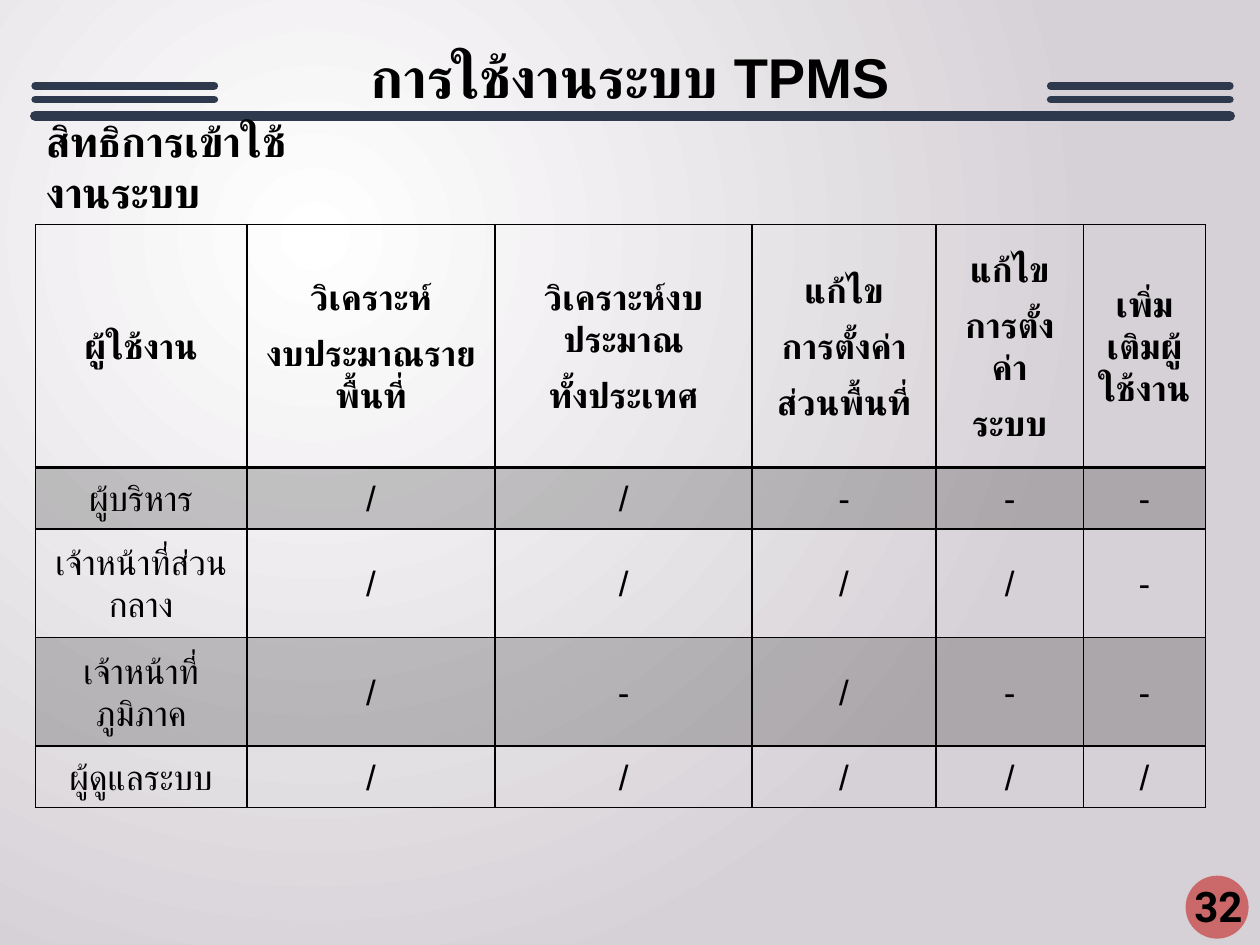
from dataclasses import dataclass

from lxml.etree import SubElement
from pptx import Presentation
from pptx.dml.color import RGBColor
from pptx.enum.shapes import MSO_CONNECTOR, MSO_SHAPE
from pptx.enum.text import MSO_ANCHOR, MSO_AUTO_SIZE, PP_ALIGN
from pptx.oxml.ns import qn
from pptx.util import Inches, Pt

BLACK = RGBColor(0x00, 0x00, 0x00)
WHITE = RGBColor(0xFF, 0xFF, 0xFF)
MIST = RGBColor(0xD6, 0xD1, 0xD6)
NAVY = RGBColor(0x2E, 0x39, 0x4D)
RED = RGBColor(0xC0, 0x00, 0x00)


@dataclass
class Rule:
    left: float
    right: float
    y: float
    weight: float


@dataclass
class Row:
    height: float
    cells: list[str]
    header: bool = False
    shaded: bool = False


RULES = [Rule(0.28, 9.76, 0.92, 6)] + [
    Rule(left, left + 1.42, y, 4.5) for y in (0.79, 0.68) for left in (8.34, 0.28)
]
COLUMN_WIDTHS = [1.68, 1.97, 2.04, 1.46, 1.17, 0.97]
ROWS = [
    Row(1.93, ["ผู้ใช้งาน", "วิเคราะห์\nงบประมาณรายพื้นที่", "วิเคราะห์งบประมาณ\nทั้งประเทศ",
               "แก้ไข\nการตั้งค่า\nส่วนพื้นที่", "แก้ไข\nการตั้งค่า\nระบบ", "เพิ่มเติมผู้ใช้งาน"],
        header=True),
    Row(0.49, ["ผู้บริหาร", "/", "/", "-", "-", "-"], shaded=True),
    Row(0.86, ["เจ้าหน้าที่ส่วนกลาง", "/", "/", "/", "/", "-"]),
    Row(0.86, ["เจ้าหน้าที่ภูมิภาค", "/", "-", "/", "-", "-"], shaded=True),
    Row(0.49, ["ผู้ดูแลระบบ", "/", "/", "/", "/", "/"]),
]


def write_text(frame, text: str, *, size: float, font: str = "Arial", bold: bool = True,
               align=PP_ALIGN.CENTER, line_spacing=None, space_after=None) -> None:
    frame.text = text
    for para in frame.paragraphs:
        para.alignment = align
        para.line_spacing = line_spacing
        para.space_after = space_after
        for span in para.runs:
            span.font.name = font
            span.font.size = Pt(size)
            span.font.bold = bold
            span.font.color.rgb = BLACK
            SubElement(span.font._element, qn("a:cs"), typeface=font)


def set_opacity(properties, percent: int) -> None:
    color = properties.find(f"{qn('a:solidFill')}/{qn('a:srgbClr')}")
    SubElement(color, qn("a:alpha"), val=str(percent * 1000))


def paint_background(page) -> None:
    fill = page.background.fill
    fill.gradient()
    for stop, color in zip(fill.gradient_stops, (WHITE, MIST)):
        stop.color.rgb = color
    gradient = page._element.find(f".//{qn('a:gradFill')}")
    gradient.remove(gradient.find(qn("a:lin")))
    circle = SubElement(gradient, qn("a:path"), path="circle")
    SubElement(circle, qn("a:fillToRect"), l="50000", t="50000", r="100000", b="100000")


def add_rule(page, rule: Rule) -> None:
    line = page.shapes.add_connector(MSO_CONNECTOR.STRAIGHT, Inches(rule.left), Inches(rule.y),
                                     Inches(rule.right), Inches(rule.y))
    line.line.color.rgb = NAVY
    line.line.width = Pt(rule.weight)
    line.line._get_or_add_ln().set("cap", "rnd")
    SubElement(line._element.spPr, qn("a:effectLst"))


def add_box(page, left: float, top: float, width: float, height: float):
    box = page.shapes.add_textbox(Inches(left), Inches(top), Inches(width), Inches(height))
    box.text_frame.word_wrap = True
    box.text_frame.vertical_anchor = MSO_ANCHOR.MIDDLE
    return box.text_frame


def add_page_number(page, number: str) -> None:
    disc = page.shapes.add_shape(MSO_SHAPE.OVAL, Inches(9.41), Inches(6.95), Inches(0.5), Inches(0.5))
    disc.shadow.inherit = False
    disc.fill.solid()
    disc.fill.fore_color.rgb = RED
    set_opacity(disc._element.spPr, 50)
    disc.line.fill.background()
    write_text(add_box(page, 9.38, 6.98, 0.58, 0.42), number, size=24, font="Roboto")


def add_title(page, text: str) -> None:
    title = page.shapes.title
    title.left, title.top, title.width, title.height = 0, Inches(0.21), Inches(10), Inches(0.71)
    title.text_frame.auto_size = MSO_AUTO_SIZE.NONE
    title.text_frame.vertical_anchor = MSO_ANCHOR.BOTTOM
    write_text(title.text_frame, text, size=32, line_spacing=Pt(58))


def add_border(cell, side: str, weight: float) -> None:
    line = SubElement(cell._tc.get_or_add_tcPr(), qn(f"a:{side}"), w=str(Pt(weight)))
    fill = SubElement(line, qn("a:solidFill"))
    SubElement(fill, qn("a:srgbClr"), val=str(BLACK))


def fill_cell(cell, text: str, row: Row, below_header: bool) -> None:
    weights = {"lnL": 1, "lnR": 1, "lnT": 2 if below_header else 1, "lnB": 2 if row.header else 1}
    for side, weight in weights.items():
        add_border(cell, side, weight)
    if row.shaded:
        cell.fill.solid()
        cell.fill.fore_color.rgb = BLACK
        set_opacity(cell._tc.tcPr, 20)
    else:
        cell.fill.background()
    cell.vertical_anchor = MSO_ANCHOR.MIDDLE
    write_text(cell.text_frame, text, size=20, bold=row.header, line_spacing=1.07, space_after=Pt(8))


def add_rights_table(page) -> None:
    frame = page.shapes.add_table(len(ROWS), len(COLUMN_WIDTHS), Inches(0.28), Inches(1.78),
                                  Inches(sum(COLUMN_WIDTHS)), Inches(sum(row.height for row in ROWS)))
    table = frame.table
    table.horz_banding = False
    for column, width in zip(table.columns, COLUMN_WIDTHS):
        column.width = Inches(width)
    for index, row in enumerate(ROWS):
        table.rows[index].height = Inches(row.height)
        for column, text in enumerate(row.cells):
            fill_cell(table.cell(index, column), text, row, below_header=index == 1)


def main() -> None:
    deck = Presentation()
    deck.slide_width, deck.slide_height = Inches(10), Inches(7.5)
    page = deck.slides.add_slide(deck.slide_layouts[5])
    paint_background(page)
    for rule in RULES:
        add_rule(page, rule)
    add_page_number(page, "32")
    add_title(page, "การใช้งานระบบ TPMS")
    add_rights_table(page)
    write_text(add_box(page, 0.27, 1.07, 2.41, 0.5), "สิทธิการเข้าใช้งานระบบ", size=24, align=PP_ALIGN.LEFT)
    deck.save("out.pptx")


if __name__ == "__main__":
    main()
